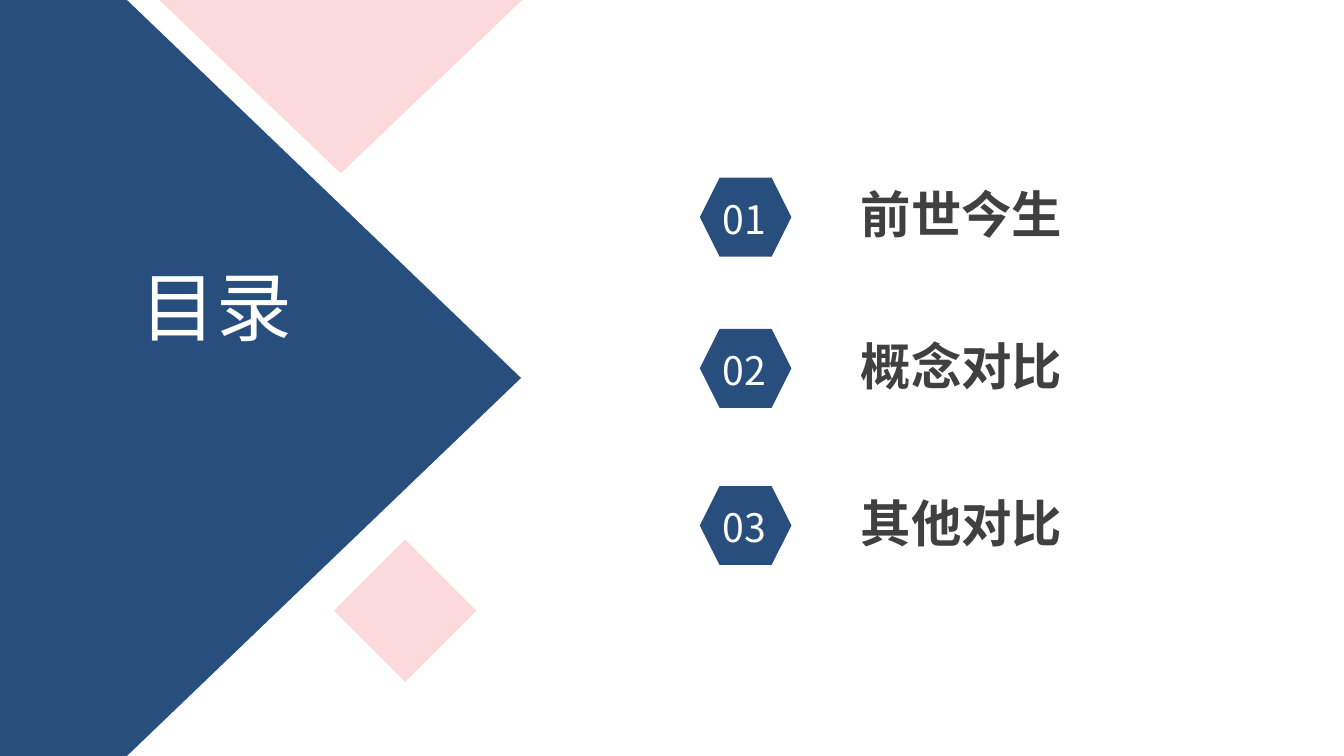
from lxml import etree
from pptx import Presentation
from pptx.dml.color import RGBColor
from pptx.enum.shapes import MSO_SHAPE
from pptx.enum.text import MSO_AUTO_SIZE
from pptx.oxml.ns import qn
from pptx.util import Pt

# Content
TITLE = "目录"
TOPICS = ["前世今生", "概念对比", "其他对比"]
ROW_TOPS = [126.9, 234.9, 347.2]

FONT = "Noto Sans CJK SC"
COLORS = {"navy": "284E7D", "pink": "FCDADB", "white": "FFFFFF", "gray": "404040"}
WIDTH, HEIGHT = 960, 540
ARROW_EDGE, ARROW_TIP = 90.7, 372.2

deck = Presentation()
deck.slide_width, deck.slide_height = Pt(WIDTH), Pt(HEIGHT)
page = deck.slides.add_slide(deck.slide_layouts[6])


def paint(shape, color):
    shape.shadow.inherit = False
    shape.fill.solid()
    shape.fill.fore_color.rgb = RGBColor.from_string(COLORS[color])
    shape.line.fill.background()
    return shape


def add_figure(kind, bounds, color):
    return paint(page.shapes.add_shape(kind, *map(Pt, bounds)), color)


def add_text(text, bounds, size, color, bold=False, wrap=True):
    box = page.shapes.add_textbox(*map(Pt, bounds))
    frame = box.text_frame
    frame.word_wrap = wrap
    frame.auto_size = MSO_AUTO_SIZE.SHAPE_TO_FIT_TEXT
    span = frame.paragraphs[0].add_run()
    span.text = text
    for name, value in {"name": FONT, "size": Pt(size), "bold": bold}.items():
        setattr(span.font, name, value)
    span.font.color.rgb = RGBColor.from_string(COLORS[color])
    # Chinese characters take the East Asian typeface
    etree.SubElement(span.font._element, qn("a:ea"), typeface=FONT)


# Background
page.background.fill.solid()
page.background.fill.fore_color.rgb = RGBColor.from_string(COLORS["white"])

# Left decoration
triangle = add_figure(MSO_SHAPE.ISOSCELES_TRIANGLE, (113.8, 0, 259.2, 123.8), "pink")
triangle._element.spPr.find(qn("a:xfrm")).set("flipV", "1")
outline = page.shapes.build_freeform(0, 0, scale=Pt(1) / 100)
corners = [(ARROW_EDGE, 0), (ARROW_TIP, HEIGHT / 2), (ARROW_EDGE, HEIGHT), (0, HEIGHT)]
outline.add_line_segments([(x * 100, y * 100) for x, y in corners], close=True)
paint(outline.convert_to_shape(), "navy")
add_figure(MSO_SHAPE.DIAMOND, (238.5, 385.4, 101.8, 101.8), "pink")
add_text(TITLE, (93.6, 182.2, 122.4, 72.7), 54, "white", wrap=False)

# Numbered topics
for number, (topic, top) in enumerate(zip(TOPICS, ROW_TOPS), start=1):
    add_figure(MSO_SHAPE.HEXAGON, (499.9, top, 65.4, 56.4), "navy")
    add_text(f"{number:02}", (509.2, top + 8.9, 47.5, 41.2), 28, "white")
    add_text(topic, (607.7, top + 0.6, 159.1, 50.9), 36, "gray", bold=True)

deck.save("out.pptx")
